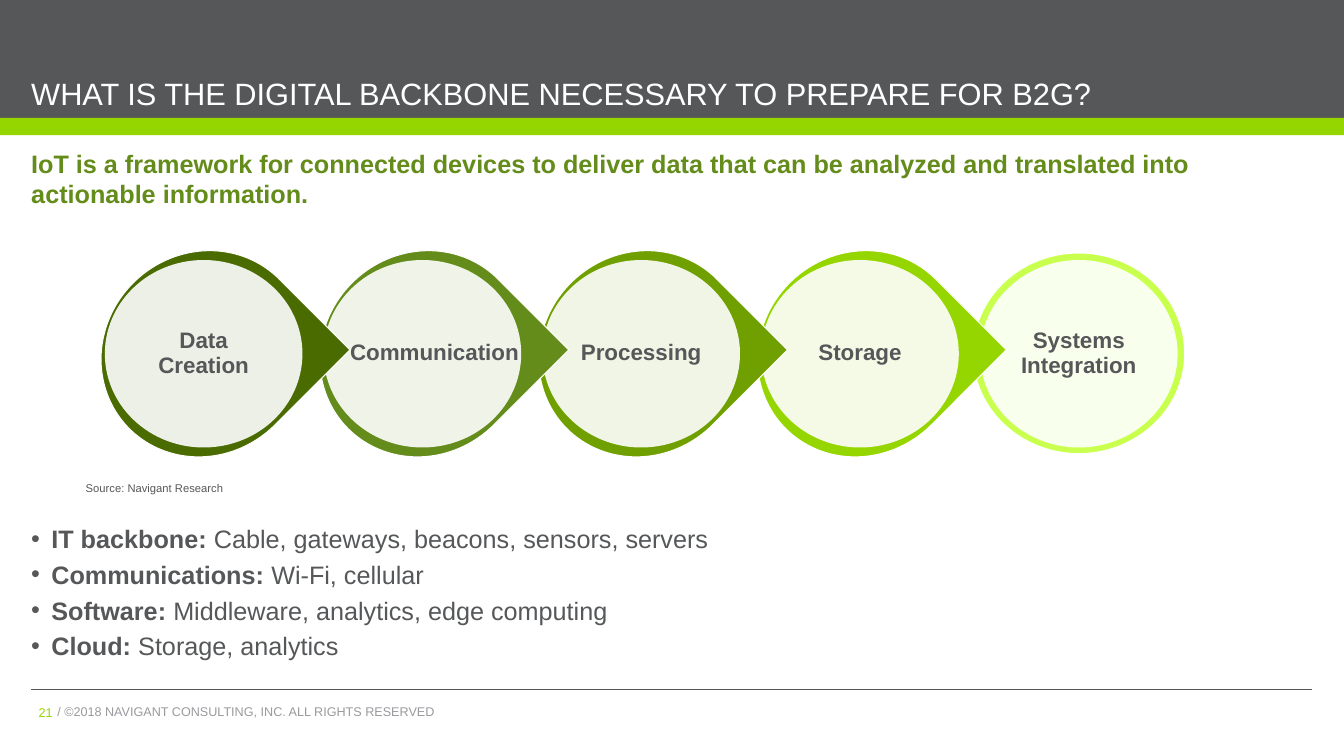
from lxml.etree import SubElement
from pptx import Presentation
from pptx.dml.color import RGBColor
from pptx.enum.shapes import MSO_CONNECTOR, MSO_SHAPE
from pptx.enum.text import MSO_ANCHOR as Anchor, MSO_AUTO_SIZE as AutoSize, PP_ALIGN as Align
from pptx.oxml.ns import qn
from pptx.util import Inches, Pt

GREY = RGBColor(0x55, 0x57, 0x59)
LIGHT_GREY = RGBColor(0x98, 0x9A, 0x9D)
LIME = RGBColor(0x95, 0xD6, 0x00)
PALE_LIME = RGBColor(0xC9, 0xFF, 0x4D)
OLIVE = RGBColor(0x70, 0xA0, 0x00)
GREEN = RGBColor(0x64, 0x8C, 0x1A)
DARK_GREEN = RGBColor(0x4A, 0x6B, 0x00)
WHITE = RGBColor(0xFF, 0xFF, 0xFF)

TITLE = "WHAT IS THE DIGITAL BACKBONE NECESSARY TO PREPARE FOR B2G?"
HEADLINE = ("IoT is a framework for connected devices to deliver data that can be "
            "analyzed and translated into actionable information.")
SOURCE = "Source: Navigant Research"
COPYRIGHT = "/ ©2018 NAVIGANT CONSULTING, INC. ALL RIGHTS RESERVED"
PAGE_NUMBER = "21"
STAGES = [
    ("Data Creation", DARK_GREEN),
    ("Communication", GREEN),
    ("Processing", OLIVE),
    ("Storage", LIME),
    ("Systems Integration", PALE_LIME),
]
BACKBONE = [
    ("IT backbone: ", "Cable, gateways, beacons, sensors, servers"),
    ("Communications: ", "Wi-Fi, cellular"),
    ("Software: ", "Middleware, analytics, edge computing"),
    ("Cloud: ", "Storage, analytics"),
]
MARGIN, CONTENT_WIDTH = 0.31, 12.7
DISC_LEFT, DISC_TOP, DISC_WIDTH, DISC_HEIGHT = 1.04, 2.58, 1.96, 1.86
STAGE_PITCH = 2.17


def place(shape, left, top, width, height):
    shape.left, shape.top = Inches(left), Inches(top)
    shape.width, shape.height = Inches(width), Inches(height)


def set_frame(shape, anchor, side=0, end=0):
    frame = shape.text_frame
    frame.auto_size = AutoSize.NONE
    frame.word_wrap = True
    frame.vertical_anchor = anchor
    frame.margin_left = frame.margin_right = Inches(side)
    frame.margin_top = frame.margin_bottom = Inches(end)
    return frame


def style(para, size, color, bold=False, align=Align.LEFT, spacing=1.0, before=0):
    para.alignment = align
    para.line_spacing = spacing
    para.space_before = Pt(before)
    para.font.name = "Arial"
    para.font.size = Pt(size)
    para.font.bold = bold
    para.font.color.rgb = color


def write(shape, text, anchor, side=0, end=0, **look):
    frame = set_frame(shape, anchor, side, end)
    frame.text = text
    style(frame.paragraphs[0], **look)
    return frame


def add_filled(page, kind, bounds, color, outline=None):
    shape = page.shapes.add_shape(kind, *map(Inches, bounds))
    shape.shadow.inherit = False
    shape.fill.solid()
    shape.fill.fore_color.rgb = color
    if outline:
        shape.line.color.rgb = outline
        shape.line.width = Pt(0.75)
    else:
        shape.line.fill.background()
    return shape


def add_label(page, text, bounds, **look):
    box = page.shapes.add_textbox(*map(Inches, bounds))
    return write(box, text, Anchor.MIDDLE, 0.1, 0.05, spacing=0.86, **look)


def add_frame_parts(page):
    add_filled(page, MSO_SHAPE.RECTANGLE, (0, 0, 13.33, 1.17), GREY)
    add_filled(page, MSO_SHAPE.RECTANGLE, (0, 1.17, 13.33, 0.17), LIME)
    rule = page.shapes.add_connector(
        MSO_CONNECTOR.STRAIGHT, Inches(MARGIN), Inches(6.84),
        Inches(MARGIN + CONTENT_WIDTH), Inches(6.84))
    rule.line.color.rgb = GREY
    rule.line.width = Pt(0.75)
    SubElement(rule.element.spPr, qn("a:effectLst"))
    add_label(page, COPYRIGHT, (0.47, 6.96, 6.37, 0.22), size=9, color=LIGHT_GREY)
    add_label(page, PAGE_NUMBER, (0.18, 6.96, 0.44, 0.23), size=9, color=LIME, align=Align.RIGHT)


def add_stage(page, index, name, color):
    left = DISC_LEFT + index * STAGE_PITCH
    if index == len(STAGES) - 1:
        add_filled(page, MSO_SHAPE.OVAL, (left - 0.07, 2.51, 2.1, 1.99), color, WHITE)
    else:
        drop = add_filled(page, MSO_SHAPE.TEAR, (left - 0.01, 2.46, 1.99, 2.1), color, WHITE)
        drop.rotation = 45
    disc = add_filled(page, MSO_SHAPE.OVAL, (left, DISC_TOP, DISC_WIDTH, DISC_HEIGHT), WHITE)
    tint = disc.element.spPr.find(qn("a:solidFill"))[0]
    SubElement(tint, qn("a:alpha"), val="90000")
    look = dict(size=16, color=GREY, bold=True, align=Align.CENTER)
    if name == "Communication":
        return look
    write(disc, name, Anchor.MIDDLE, spacing=0.9, **look)
    return look


def add_backbone(body):
    frame = set_frame(body, Anchor.TOP)
    for index, (topic, detail) in enumerate(BACKBONE):
        para = frame.paragraphs[0] if index == 0 else frame.add_paragraph()
        props = para._p.get_or_add_pPr()
        props.set("marL", str(Inches(0.2)))
        props.set("indent", str(-Inches(0.2)))
        SubElement(props, qn("a:buChar"), char="•")
        style(para, 18, GREY, before=4 if index else 0)
        span = para.add_run()
        span.text = topic
        span.font.bold = True
        para.add_run().text = detail


def main():
    deck = Presentation()
    deck.slide_width, deck.slide_height = Inches(13.33), Inches(7.5)
    page = deck.slides.add_slide(deck.slide_layouts.get_by_name("Comparison"))
    title, headline, backbone, source, spare = page.placeholders
    spare.element.getparent().remove(spare.element)

    add_frame_parts(page)
    place(title, MARGIN, 0, CONTENT_WIDTH, 1.11)
    write(title, TITLE, Anchor.BOTTOM, size=22, color=WHITE)
    title.element.getparent().append(title.element)
    place(headline, MARGIN, 1.47, CONTENT_WIDTH, 0.6)
    write(headline, HEADLINE, Anchor.TOP, size=18, color=GREEN, bold=True)
    place(backbone, MARGIN, 5.19, 11.11, 1.32)
    add_backbone(backbone)
    place(source, 0.85, 4.78, 3, 0.13)
    write(source, SOURCE, Anchor.BOTTOM, size=8, color=GREY)

    for index, (name, color) in reversed(list(enumerate(STAGES))):
        look = add_stage(page, index, name, color)
    caption = add_label(page, STAGES[1][0], (3.36, 3.34, 1.9, 0.33), **look)
    caption.word_wrap = False
    deck.save("out.pptx")


if __name__ == "__main__":
    main()
